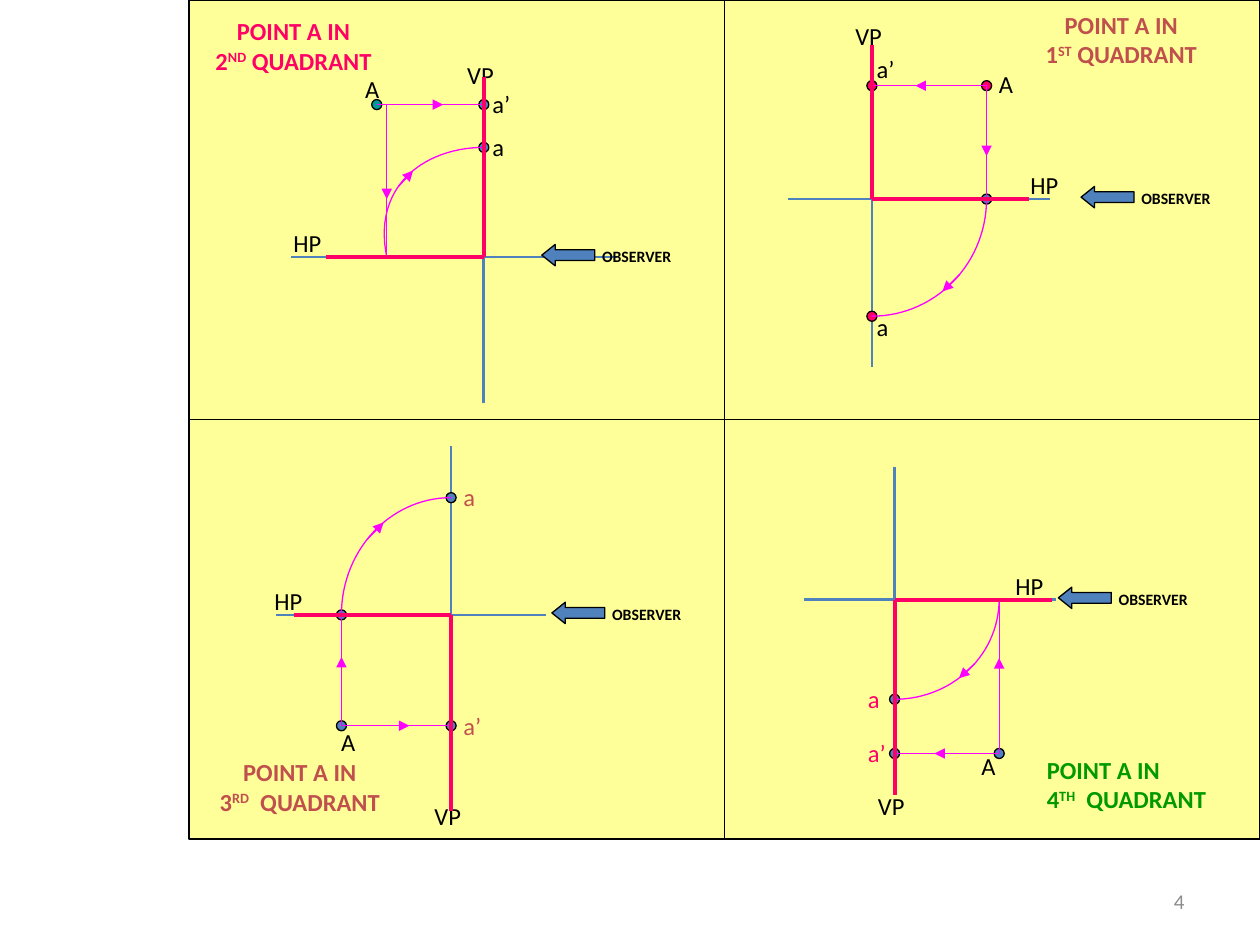
from dataclasses import dataclass
from math import cos, radians, sin

from lxml import etree
from pptx import Presentation
from pptx.dml.color import RGBColor
from pptx.enum.shapes import MSO_CONNECTOR, MSO_SHAPE
from pptx.enum.text import MSO_ANCHOR, MSO_AUTO_SIZE, PP_ALIGN
from pptx.oxml.ns import qn
from pptx.util import Pt

PX = 9144  # 100 px to the inch
FONT = "Calibri"
BLACK = RGBColor(0x00, 0x00, 0x00)
GRAY = RGBColor(0x8C, 0x8C, 0x8C)
YELLOW = RGBColor(0xFF, 0xFF, 0x99)
BLUE = RGBColor(0x4F, 0x81, 0xBD)
TEAL = RGBColor(0x00, 0x99, 0x99)
PINK = RGBColor(0xFF, 0x00, 0x66)
MAGENTA = RGBColor(0xFF, 0x00, 0xFF)
BRICK = RGBColor(0xC0, 0x50, 0x4D)
GREEN = RGBColor(0x00, 0x99, 0x00)

RECTANGLE, OVAL, LEFT_ARROW = MSO_SHAPE.RECTANGLE, MSO_SHAPE.OVAL, MSO_SHAPE.LEFT_ARROW
STRAIGHT = MSO_CONNECTOR.STRAIGHT
LEFT, CENTER, RIGHT = PP_ALIGN.LEFT, PP_ALIGN.CENTER, PP_ALIGN.RIGHT
TOP, MIDDLE = MSO_ANCHOR.TOP, MSO_ANCHOR.MIDDLE
FIT_SHAPE, NO_FIT = MSO_AUTO_SIZE.SHAPE_TO_FIT_TEXT, MSO_AUTO_SIZE.NONE

PANEL_LEFT, PANEL_WIDTH, PANEL_HEIGHT = 150, 425, 333
VERTICAL_AXIS, HP_LENGTH = 259, 125
DOT = 8
LABEL_WIDTHS = {"HP": 47, "VP": 46, "A": 33, "a": 31, "a’": 35}


@dataclass
class Quadrant:
    """One panel; lengths are px from where its axes cross."""
    column: int
    row: int
    ordinal: tuple       # number, suffix, rest of the title line
    title_at: tuple      # from the panel's corner
    title_color: RGBColor
    crossing: tuple      # from the panel's corner
    horizontal: tuple    # left and right ends of the axis
    top: int             # upper end of the vertical axis
    vp_end: int
    point: tuple         # point A
    plan: int            # height of a on the vertical axis
    hp_label: int
    vp_label: int
    point_label: tuple   # from point A
    view_label: int      # left of a and a’
    observer: int
    lifts: tuple = (17, 17)  # rise of the a’ and a labels over their dots
    shift: int = 0       # dot A, sideways from its projector
    bulge: int = 0       # widening of the arc
    foot: bool = False   # dot where the projector meets HP
    dot_color: RGBColor = BLUE
    point_color: RGBColor = BLUE
    view_color: RGBColor = BLACK
    title_align: int = CENTER


QUADRANTS = [
    Quadrant(1, 0, ("1", "ST", " QUADRANT"), (232, 3), BRICK, (117, 158), (-67, 141), -126,
             vp_end=-122, point=(91, -90), plan=93, hp_label=116, vp_label=-146,
             point_label=(0, -18), view_label=-6, observer=166, lifts=(30, 8),
             foot=True, dot_color=PINK, point_color=PINK),
    Quadrant(0, 0, ("2", "ND", " QUADRANT"), (0, 8), PINK, (234, 204), (-153, 106), -143,
             vp_end=-143, point=(-77, -121), plan=-87, hp_label=-161, vp_label=-161,
             point_label=(-27, -29), view_label=-3, observer=46, shift=-8, bulge=-9,
             point_color=TEAL),
    Quadrant(0, 1, ("3", "RD", "  QUADRANT"), (5, 263), BRICK, (208, 155), (-139, 75), -134,
             vp_end=156, point=(-87, 88), plan=-93, hp_label=-150, vp_label=143,
             point_label=(-10, -4), view_label=0, observer=80, foot=True, view_color=BRICK),
    Quadrant(1, 1, ("4", "TH", "  QUADRANT"), (246, 261), GREEN, (135, 143), (-72, 128), -105,
             vp_end=155, point=(83, 122), plan=79, hp_label=86, vp_label=147,
             point_label=(-24, -7), view_label=-31, observer=130, view_color=PINK,
             title_align=LEFT),
]


def add_text(slide, lines, left, top, width, height, size=14, color=BLACK, bold=False,
             align=LEFT, anchor=TOP, wrap=False):
    """Each line is a list of runs; the second run of a line is superscript."""
    box = slide.shapes.add_textbox(left * PX, top * PX, width * PX, height * PX)
    frame = box.text_frame
    frame.word_wrap = wrap
    frame.auto_size = NO_FIT if wrap else FIT_SHAPE
    frame.vertical_anchor = anchor
    for index, texts in enumerate(lines):
        paragraph = frame.add_paragraph() if index else frame.paragraphs[0]
        paragraph.alignment = align
        for position, text in enumerate(texts):
            run = paragraph.add_run()
            run.text = text
            run.font.name, run.font.size, run.font.bold = FONT, Pt(size), bold
            run.font.color.rgb = color
            if position == 1:
                run.font._element.set("baseline", "30000")


def add_outlined(slide, preset, left, top, width, height, fill):
    shape = slide.shapes.add_shape(preset, left * PX, top * PX, width * PX, height * PX)
    shape.shadow.inherit = False
    shape.fill.solid()
    shape.fill.fore_color.rgb = fill
    shape.line.color.rgb = BLACK
    shape.line.width = Pt(0.75)
    return shape


def add_line(slide, start, end, color=MAGENTA, width=0.75, arrow=False):
    connector = slide.shapes.add_connector(
        STRAIGHT, *(round(value * PX) for value in (*start, *end)))
    connector.line.color.rgb = color
    connector.line.width = Pt(width)
    if arrow:
        etree.SubElement(connector.line._get_or_add_ln(), qn("a:tailEnd"), type="triangle")
    etree.SubElement(connector._element.spPr, qn("a:effectLst"))


def add_projector(slide, start, end):
    def along(share):
        return [a + (b - a) * share for a, b in zip(start, end)]
    add_line(slide, start, end)
    add_line(slide, along(0.35), along(0.62), arrow=True)


def add_arc(slide, x, y, quadrant):
    def on_arc(degrees):
        angle = radians(degrees)
        return (x + quadrant.point[0] * cos(angle) + quadrant.bulge * sin(2 * angle),
                y + quadrant.plan * sin(angle))
    points = [[value * PX for value in on_arc(degrees)] for degrees in range(0, 91, 3)]
    builder = slide.shapes.build_freeform(*points[0])
    builder.add_line_segments(points[1:], close=False)
    arc = builder.convert_to_shape()
    arc.shadow.inherit = False
    arc.fill.background()
    arc.line.color.rgb = MAGENTA
    arc.line.width = Pt(0.75)
    add_line(slide, on_arc(40), on_arc(52), arrow=True)


def add_observer(slide, left, top):
    arrow = add_outlined(slide, LEFT_ARROW, left, top, 42, 17, BLUE)
    arrow.adjustments[1] = 0.625
    add_text(slide, [["OBSERVER"]], left + 38, top - 3, 90, 25, size=9, bold=True)


def add_quadrant(slide, quadrant):
    left = PANEL_LEFT + quadrant.column * PANEL_WIDTH
    top = quadrant.row * PANEL_HEIGHT
    x, y = left + quadrant.crossing[0], top + quadrant.crossing[1]
    point_x, point_y = x + quadrant.point[0], y + quadrant.point[1]
    dot_x, plan_y = point_x + quadrant.shift, y + quadrant.plan
    add_outlined(slide, RECTANGLE, left, top, PANEL_WIDTH, PANEL_HEIGHT, YELLOW)

    # Axes
    start, end = quadrant.horizontal
    add_line(slide, (x + start, y), (x + end, y), BLUE, 1.5)
    upper = y + quadrant.top
    add_line(slide, (x, upper), (x, upper + VERTICAL_AXIS), BLUE, 1.5)

    # Points
    dots = [(dot_x, point_y, quadrant.point_color),
            (x, point_y, quadrant.dot_color), (x, plan_y, quadrant.dot_color)]
    if quadrant.foot:
        dots.append((point_x, y, BLUE))
    for center_x, center_y, fill in dots:
        add_outlined(slide, OVAL, center_x - DOT // 2, center_y - DOT // 2, DOT, DOT, fill)

    # Projectors and the rotation of the HP
    add_projector(slide, (point_x, point_y), (point_x, y))
    add_projector(slide, (dot_x, point_y), (x, point_y))
    add_arc(slide, x, y, quadrant)

    # Title, labels and observer
    title_x, title_y = quadrant.title_at
    add_text(slide, [["POINT A IN"], quadrant.ordinal], left + title_x, top + title_y, 166, 57,
             color=quadrant.title_color, bold=True, align=quadrant.title_align)
    view_x, (front_lift, plan_lift) = x + quadrant.view_label, quadrant.lifts
    label_x, label_y = quadrant.point_label
    labels = [("HP", x + quadrant.hp_label, y - 28, BLACK),
              ("VP", x - 23, y + quadrant.vp_label, BLACK),
              ("A", point_x + label_x, point_y + label_y, BLACK),
              ("a’", view_x, point_y - front_lift, quadrant.view_color),
              ("a", view_x, plan_y - plan_lift, quadrant.view_color)]
    for text, text_x, text_y, color in labels:
        add_text(slide, [[text]], text_x, text_y, LABEL_WIDTHS[text], 33, color=color)
    add_observer(slide, x + quadrant.observer, y - 10)

    # Reference planes
    hp_end = HP_LENGTH if quadrant.column else -HP_LENGTH
    for end in ((x + hp_end, y), (x, y + quadrant.vp_end)):
        add_line(slide, (x, y), end, PINK, 2.25)


def main():
    presentation = Presentation()
    presentation.slide_width, presentation.slide_height = 1000 * PX, 750 * PX
    slide = presentation.slides.add_slide(presentation.slide_layouts[6])
    for quadrant in QUADRANTS:
        add_quadrant(slide, quadrant)
    # Page number
    add_text(slide, [["4"]], 717, 695, 233, 40, size=12, color=GRAY,
             align=RIGHT, anchor=MIDDLE, wrap=True)
    presentation.save("out.pptx")


if __name__ == "__main__":
    main()
